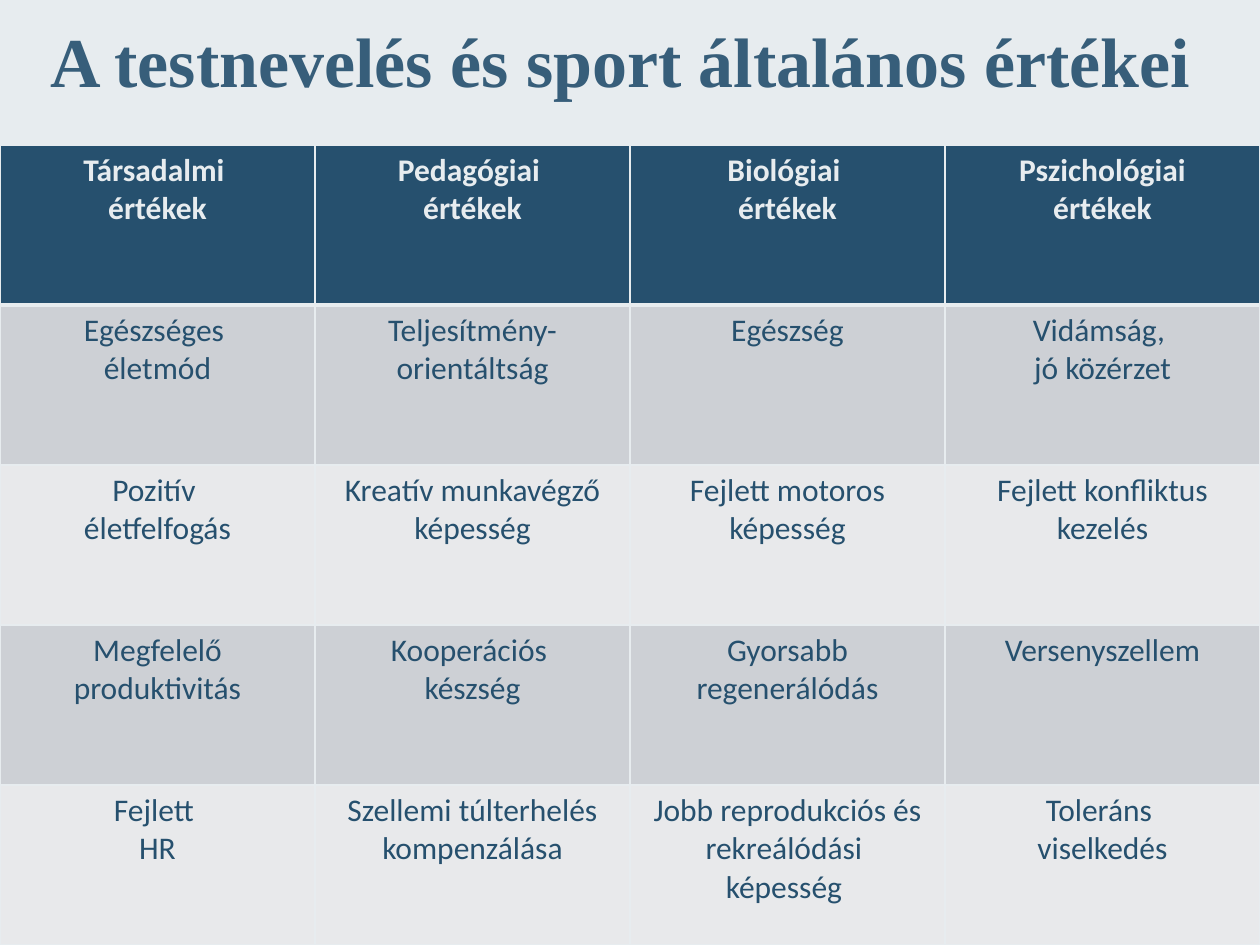
from dataclasses import dataclass

from lxml.etree import SubElement
from pptx import Presentation
from pptx.dml.color import RGBColor
from pptx.enum.text import MSO_ANCHOR, PP_ALIGN
from pptx.oxml.ns import qn
from pptx.slide import Slide
from pptx.table import _Cell
from pptx.text.text import TextFrame
from pptx.util import Inches, Pt

COLORS = {
    "background": "E7ECEF",
    "title": "375E7A",
    "navy": "26506E",
    "dark_band": "CDD0D5",
    "light_band": "E8E9EB",
}

TITLE = "A testnevelés és sport általános értékei"

ROWS = [
    ["Társadalmi \nértékek", "Pedagógiai \nértékek",
     "Biológiai \nértékek", "Pszichológiai\nértékek"],
    ["Egészséges \néletmód", "Teljesítmény-orientáltság",
     "Egészség", "Vidámság, \njó közérzet"],
    ["Pozitív \néletfelfogás", "Kreatív munkavégző képesség",
     "Fejlett motoros képesség", "Fejlett konfliktus kezelés"],
    ["Megfelelő produktivitás", "Kooperációs \nkészség",
     "Gyorsabb regenerálódás", "Versenyszellem"],
    ["Fejlett \nHR", "Szellemi túlterhelés kompenzálása",
     "Jobb reprodukciós és rekreálódási \nképesség ", "Toleráns \nviselkedés"],
]


@dataclass(frozen=True)
class TextStyle:
    """Font settings of a centred text."""

    font: str
    size: int
    color: str
    bold: bool = False


@dataclass(frozen=True)
class RowStyle:
    """Look of one table row, with border widths in points."""

    fill: str
    text: TextStyle
    top: int = 1
    bottom: int = 1


TITLE_STYLE = TextStyle("Times New Roman", 40, "title", True)
HEADER_TEXT = TextStyle("Calibri", 18, "background", True)
BODY_TEXT = TextStyle("Calibri", 18, "navy")
ROW_STYLES = [
    RowStyle("navy", HEADER_TEXT, bottom=3),
    RowStyle("dark_band", BODY_TEXT, top=3),
    RowStyle("light_band", BODY_TEXT),
    RowStyle("dark_band", BODY_TEXT),
    RowStyle("light_band", BODY_TEXT),
]


def rgb(name: str) -> RGBColor:
    """Return the named colour."""
    return RGBColor.from_string(COLORS[name])


def write_text(text_frame: TextFrame, text: str, style: TextStyle) -> None:
    """Write centred text, one paragraph a line."""
    text_frame.word_wrap = True
    text_frame.text = text
    for paragraph in text_frame.paragraphs:
        paragraph.alignment = PP_ALIGN.CENTER
        for run in paragraph.runs:
            run.font.name = style.font
            run.font.size = Pt(style.size)
            run.font.bold = style.bold
            run.font.color.rgb = rgb(style.color)


def draw_borders(cell: _Cell, style: RowStyle) -> None:
    """Give a cell its four border lines."""
    properties = cell._tc.get_or_add_tcPr()
    widths = {"lnL": 1, "lnR": 1, "lnT": style.top, "lnB": style.bottom}
    for side, width in widths.items():
        line = SubElement(properties, qn(f"a:{side}"), w=str(Pt(width)))
        fill = SubElement(line, qn("a:solidFill"))
        SubElement(fill, qn("a:srgbClr"), val=COLORS["background"])


def add_title(slide: Slide) -> None:
    """Add the slide title."""
    shape = slide.shapes.add_textbox(Inches(0.2), Inches(0.02), Inches(9.45), Inches(0.91))
    shape.text_frame.vertical_anchor = MSO_ANCHOR.MIDDLE
    write_text(shape.text_frame, TITLE, TITLE_STYLE)


def add_values_table(slide: Slide) -> None:
    """Add the table of values in four columns."""
    table = slide.shapes.add_table(
        len(ROWS), len(ROWS[0]), Inches(0), Inches(1.15), Inches(10), Inches(6.35)
    ).table
    for row, texts, style in zip(table.rows, ROWS, ROW_STYLES):
        for cell, text in zip(row.cells, texts):
            draw_borders(cell, style)
            cell.fill.solid()
            cell.fill.fore_color.rgb = rgb(style.fill)
            write_text(cell.text_frame, text, style.text)


def main() -> None:
    """Build and save the presentation."""
    presentation = Presentation()
    presentation.slide_width = Inches(10)
    presentation.slide_height = Inches(7.5)
    slide = presentation.slides.add_slide(presentation.slide_layouts[6])
    slide.background.fill.solid()
    slide.background.fill.fore_color.rgb = rgb("background")
    add_title(slide)
    add_values_table(slide)
    presentation.save("out.pptx")


if __name__ == "__main__":
    main()
